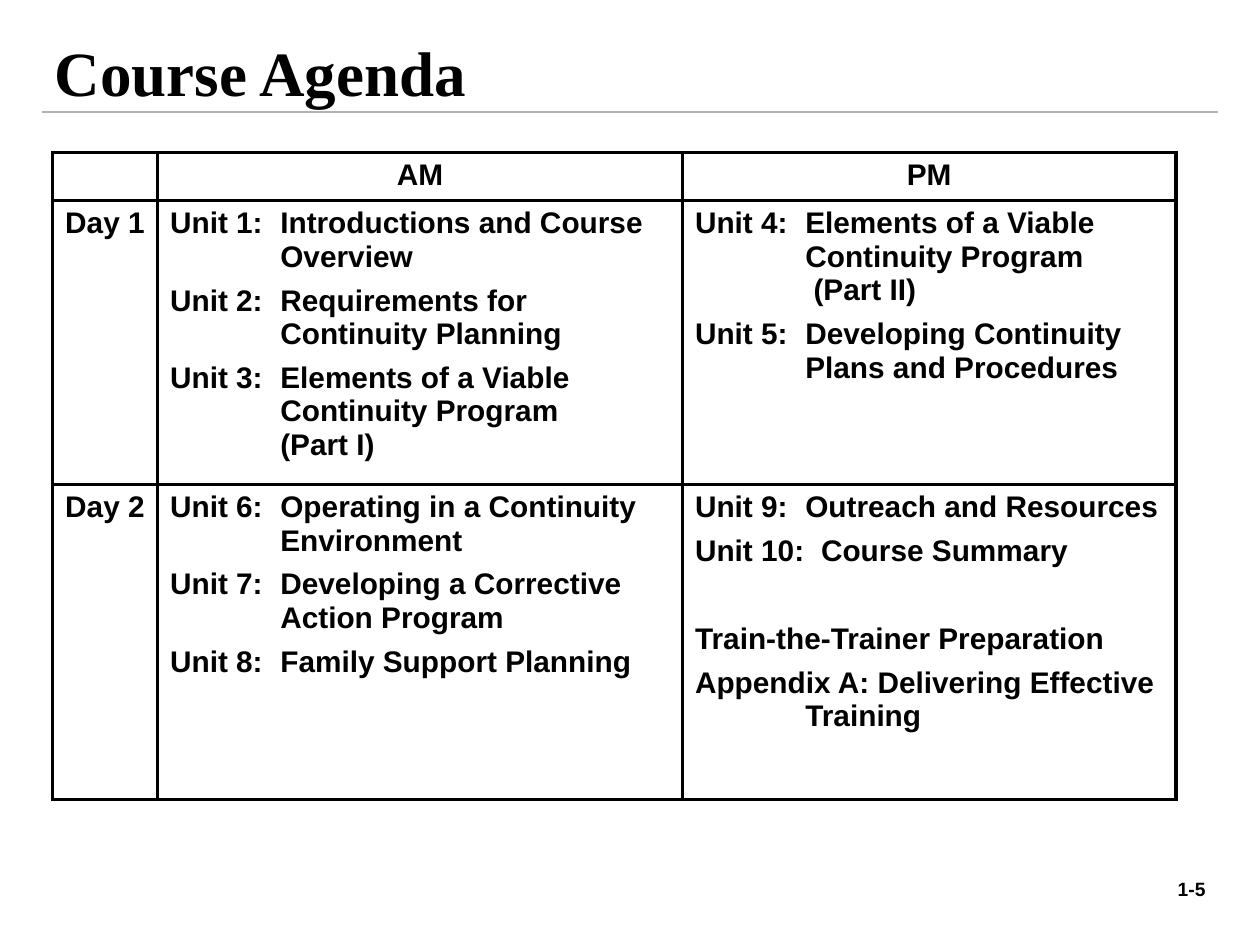
from dataclasses import dataclass
from lxml import etree
from pptx import Presentation
from pptx.dml.color import RGBColor
from pptx.enum.shapes import MSO_CONNECTOR
from pptx.enum.text import MSO_ANCHOR, MSO_AUTO_SIZE, PP_ALIGN
from pptx.oxml.ns import qn
from pptx.util import Pt

LEFT, CENTER, RIGHT = PP_ALIGN.LEFT, PP_ALIGN.CENTER, PP_ALIGN.RIGHT
MIDDLE = MSO_ANCHOR.MIDDLE
NO_FIT = MSO_AUTO_SIZE.NONE
STRAIGHT = MSO_CONNECTOR.STRAIGHT


@dataclass(frozen=True)
class Theme:
    """Hold the colours, fonts and type sizes."""
    ink: str = "000000"
    paper: str = "FFFFFF"
    rule: str = "B2B2B2"
    head: str = "Times New Roman"
    body: str = "Arial"
    title: float = 36
    cell: float = 17
    page: float = 11
    edge: float = 2.25
    gap: float = 6


THEME = Theme()
COLS = (60, 300, 282)
ROWS = (27, 162, 180)
HANG = 63
WIDE = 72
BREAK = 31

HEADS = ("", "AM", "PM")
DAYS = (
    ("Day 1",
     [("Unit 1:\tIntroductions and Course Overview", HANG, THEME.gap),
      ("Unit 2:\tRequirements for Continuity Planning", HANG, THEME.gap),
      ("Unit 3:\tElements of a Viable Continuity Program\n(Part I)", HANG, THEME.gap)],
     [("Unit 4:\tElements of a Viable Continuity Program\n (Part II)", HANG, THEME.gap),
      ("Unit 5:\tDeveloping Continuity Plans and Procedures", HANG, THEME.gap)]),
    ("Day 2",
     [("Unit 6:\tOperating in a Continuity Environment", HANG, THEME.gap),
      ("Unit 7:\tDeveloping a Corrective Action Program", HANG, THEME.gap),
      ("Unit 8:\tFamily Support Planning", HANG, THEME.gap)],
     [("Unit 9:\tOutreach and Resources", HANG, THEME.gap),
      ("Unit 10:\tCourse Summary", WIDE, THEME.gap),
      ("Train-the-Trainer Preparation", HANG, BREAK),
      ("Appendix A: Delivering Effective Training", HANG, THEME.gap)]),
)


def set_text(para, text, size, face=THEME.body, align=LEFT):
    """Write and format one paragraph."""
    para.text = text
    para.alignment = align
    font = para.font
    font.name, font.size, font.bold = face, Pt(size), True
    font.color.rgb = RGBColor.from_string(THEME.ink)


def add_title(slide, text):
    """Place the slide title."""
    title = slide.shapes.title
    title.left, title.top, title.width, title.height = Pt(24), Pt(21.6), Pt(672), Pt(38)
    frame = title.text_frame
    frame.auto_size = NO_FIT
    frame.vertical_anchor = MIDDLE
    set_text(frame.paragraphs[0], text, THEME.title, THEME.head)


def add_rule(slide):
    """Draw the line under the title."""
    line = slide.shapes.add_connector(STRAIGHT, Pt(24), Pt(64), Pt(696), Pt(64))
    line.line.color.rgb = RGBColor.from_string(THEME.rule)
    line.line.width = Pt(0.75)
    etree.SubElement(line._element.spPr, qn("a:effectLst"))


def add_page(slide, text):
    """Write the page number."""
    box = slide.shapes.add_textbox(Pt(522), Pt(498), Pt(174), Pt(21))
    box.text_frame.word_wrap = True
    set_text(box.text_frame.paragraphs[0], text, THEME.page, align=RIGHT)


def set_edges(cell):
    """Border and fill one cell."""
    props = cell._tc.get_or_add_tcPr()
    for side in ("lnL", "lnR", "lnT", "lnB"):
        line = etree.SubElement(props, qn(f"a:{side}"), w=str(Pt(THEME.edge)))
        fill = etree.SubElement(line, qn("a:solidFill"))
        etree.SubElement(fill, qn("a:srgbClr"), val=THEME.ink)
    cell.fill.solid()
    cell.fill.fore_color.rgb = RGBColor.from_string(THEME.paper)


def fill_units(cell, units):
    """List units with hanging indents."""
    frame = cell.text_frame
    for i, (text, hang, gap) in enumerate(units):
        para = frame.add_paragraph() if i else frame.paragraphs[0]
        props = para._p.get_or_add_pPr()
        props.set("marL", str(Pt(hang)))
        props.set("indent", str(-Pt(hang)))
        if i:
            para.space_before = Pt(gap)
        set_text(para, text, THEME.cell)


def add_agenda(slide):
    """Build the agenda table."""
    frame = slide.shapes.add_table(len(ROWS), len(COLS), Pt(30), Pt(87),
                                   Pt(sum(COLS)), Pt(sum(ROWS)))
    table = frame.table
    table.first_row = table.horz_banding = False
    for col, width in zip(table.columns, COLS):
        col.width = Pt(width)
    for row, height in zip(table.rows, ROWS):
        row.height = Pt(height)
    for row, items in zip(table.rows, (HEADS, *DAYS)):
        for cell, item in zip(row.cells, items):
            set_edges(cell)
            if isinstance(item, str):
                set_text(cell.text_frame.paragraphs[0], item, THEME.cell, align=CENTER)
            else:
                fill_units(cell, item)


def main():
    """Build and save the slide."""
    deck = Presentation()
    deck.slide_width, deck.slide_height = Pt(720), Pt(540)
    slide = deck.slides.add_slide(deck.slide_layouts[5])
    add_rule(slide)
    add_page(slide, "1-5")
    add_title(slide, "Course Agenda")
    add_agenda(slide)
    deck.save("out.pptx")


if __name__ == "__main__":
    main()
